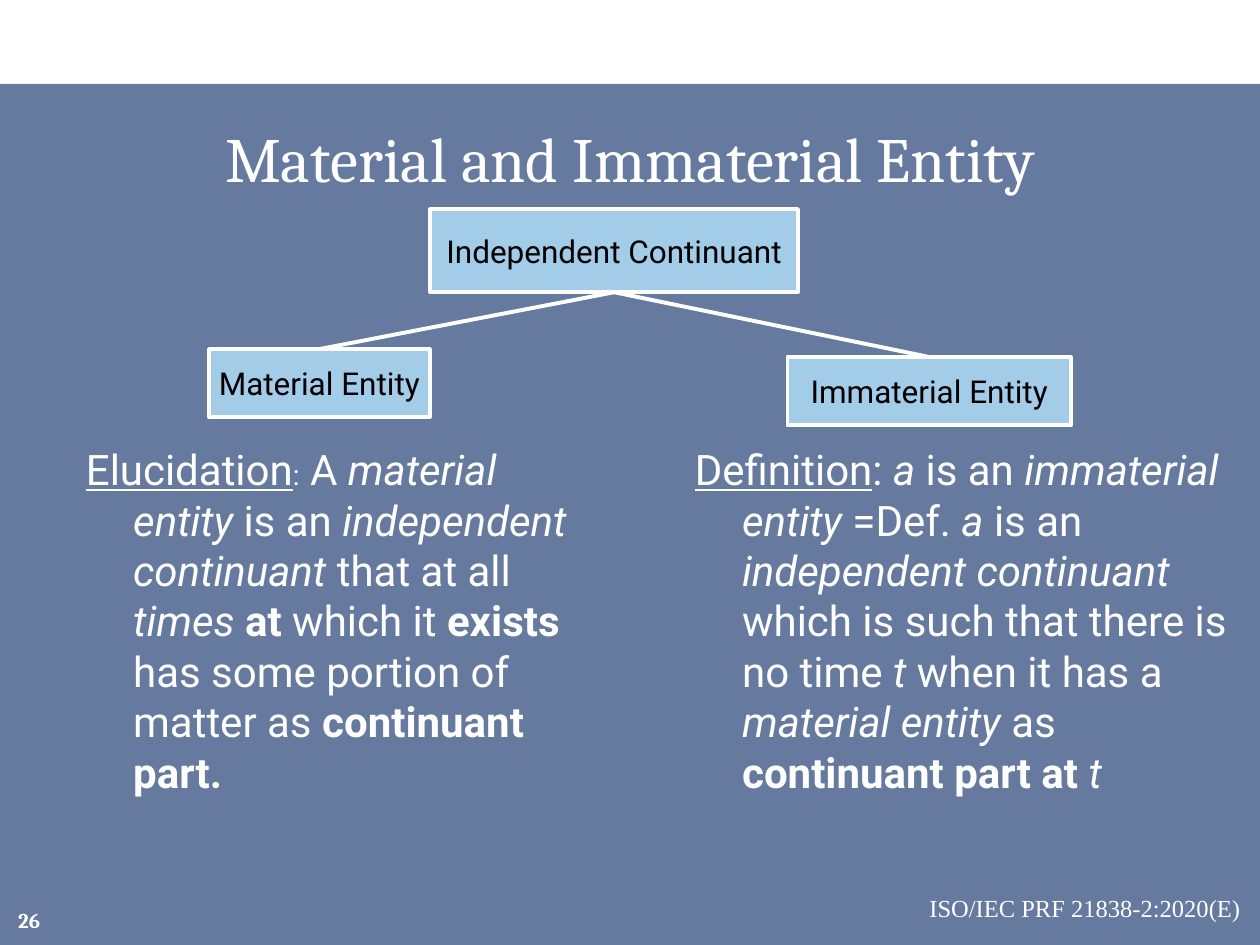
"""Build a slide that sets material beside immaterial entity."""
from lxml.etree import SubElement
from pptx import Presentation
from pptx.dml.color import RGBColor
from pptx.enum.shapes import MSO_CONNECTOR, MSO_SHAPE
from pptx.enum.text import MSO_ANCHOR, PP_ALIGN
from pptx.oxml.ns import qn
from pptx.util import Pt

HUES = {"navy": "002060", "sky": "A2CCE8", "white": "FFFFFF", "black": "000000"}


def hue(name):
    return RGBColor.from_string(HUES[name])


def write(shape, text, size=24, font="Roboto", color="white", align=PP_ALIGN.LEFT,
          anchor=MSO_ANCHOR.TOP, wrap=True, hang=0):
    """Fill a shape with one paragraph; text is a list of (words, style letters)."""
    frame = shape.text_frame
    frame.word_wrap = wrap
    frame.vertical_anchor = anchor
    para = frame.paragraphs[0]
    para.alignment = align
    if hang:
        props = para._p.get_or_add_pPr()
        props.set("marL", str(Pt(hang)))
        props.set("indent", str(-Pt(hang)))
    for words, style in text:
        run = para.add_run()
        run.text = words
        run.font.name = font
        run.font.size = Pt(16 if "s" in style else size)
        run.font.color.rgb = hue(color)
        run.font.bold = "b" in style
        run.font.italic = "i" in style
        run.font.underline = "u" in style


deck = Presentation()
deck.slide_width, deck.slide_height = Pt(720), Pt(540)
slide = deck.slides.add_slide(deck.slide_layouts[6])
shapes = slide.shapes

panel = shapes.add_shape(MSO_SHAPE.RECTANGLE, Pt(0), Pt(48), Pt(720), Pt(492))
panel.shadow.inherit = False
panel.fill.solid()
panel.fill.fore_color.rgb = hue("navy")
panel.line.fill.background()
tint = panel.fill._xPr.find(".//" + qn("a:srgbClr"))
SubElement(tint, qn("a:alpha"), val="60000")

title = shapes.add_textbox(Pt(18), Pt(60), Pt(684), Pt(60))
write(title, [("Material and Immaterial Entity", "")], size=36, font="Cambria",
      align=PP_ALIGN.CENTER, anchor=MSO_ANCHOR.MIDDLE)

page = shapes.add_textbox(Pt(-6), Pt(511), Pt(36), Pt(29))
write(page, [("26", "b")], size=12, font="Cambria", align=PP_ALIGN.RIGHT,
      anchor=MSO_ANCHOR.MIDDLE)

nodes = []
for label, left, top, width, height in [
    ("Independent Continuant", 246, 119.5, 210, 47.5),
    ("Material Entity", 119.5, 199.5, 126, 39),
    ("Immaterial Entity", 450, 204, 162, 39),
]:
    node = shapes.add_shape(MSO_SHAPE.RECTANGLE, Pt(left), Pt(top), Pt(width), Pt(height))
    node.shadow.inherit = False
    node.fill.solid()
    node.fill.fore_color.rgb = hue("sky")
    node.line.color.rgb = hue("white")
    node.line.width = Pt(2.25)
    write(node, [(label, "")], size=18, color="black", align=PP_ALIGN.CENTER,
          anchor=MSO_ANCHOR.MIDDLE, wrap=False)
    nodes.append(node)

root, *kids = nodes
for kid in kids:
    link = shapes.add_connector(MSO_CONNECTOR.STRAIGHT, 0, 0, 0, 0)
    link.begin_connect(root, 2)
    link.end_connect(kid, 0)
    link.line.color.rgb = hue("white")
    link.line.width = Pt(2.25)
    SubElement(link._element.spPr, qn("a:effectLst"))

left_text = [
    ("Elucidation", "u"), (":", "s"), (" A ", ""), ("material entity", "i"),
    (" is an ", ""), ("independent continuant", "i"), (" that at all ", ""),
    ("times ", "i"), ("at", "b"), (" which it ", ""), ("exists", "b"),
    (" has some portion of matter as ", ""), ("continuant part.", "b"),
]
right_text = [
    ("Definition", "u"), (": ", ""), ("a", "i"), (" is an ", ""),
    ("immaterial entity", "i"), (" =Def. ", ""), ("a", "i"), (" is an ", ""),
    ("independent continuant", "i"), (" which is such that there is no time ", ""),
    ("t", "i"), (" when it has a ", ""), ("material entity", "i"), (" as ", ""),
    ("continuant part at ", "b"), ("t", "i"),
]
for text, left, width in [(left_text, 42, 300), (right_text, 390, 324)]:
    body = shapes.add_textbox(Pt(left), Pt(250), Pt(width), Pt(276))
    write(body, text, hang=27)

source = shapes.add_textbox(Pt(522), Pt(507), Pt(197.5), Pt(24.5))
write(source, [("ISO/IEC PRF 21838-2:2020(E) ", "")], size=14, font="Times New Roman",
      align=PP_ALIGN.RIGHT)

deck.save("out.pptx")
